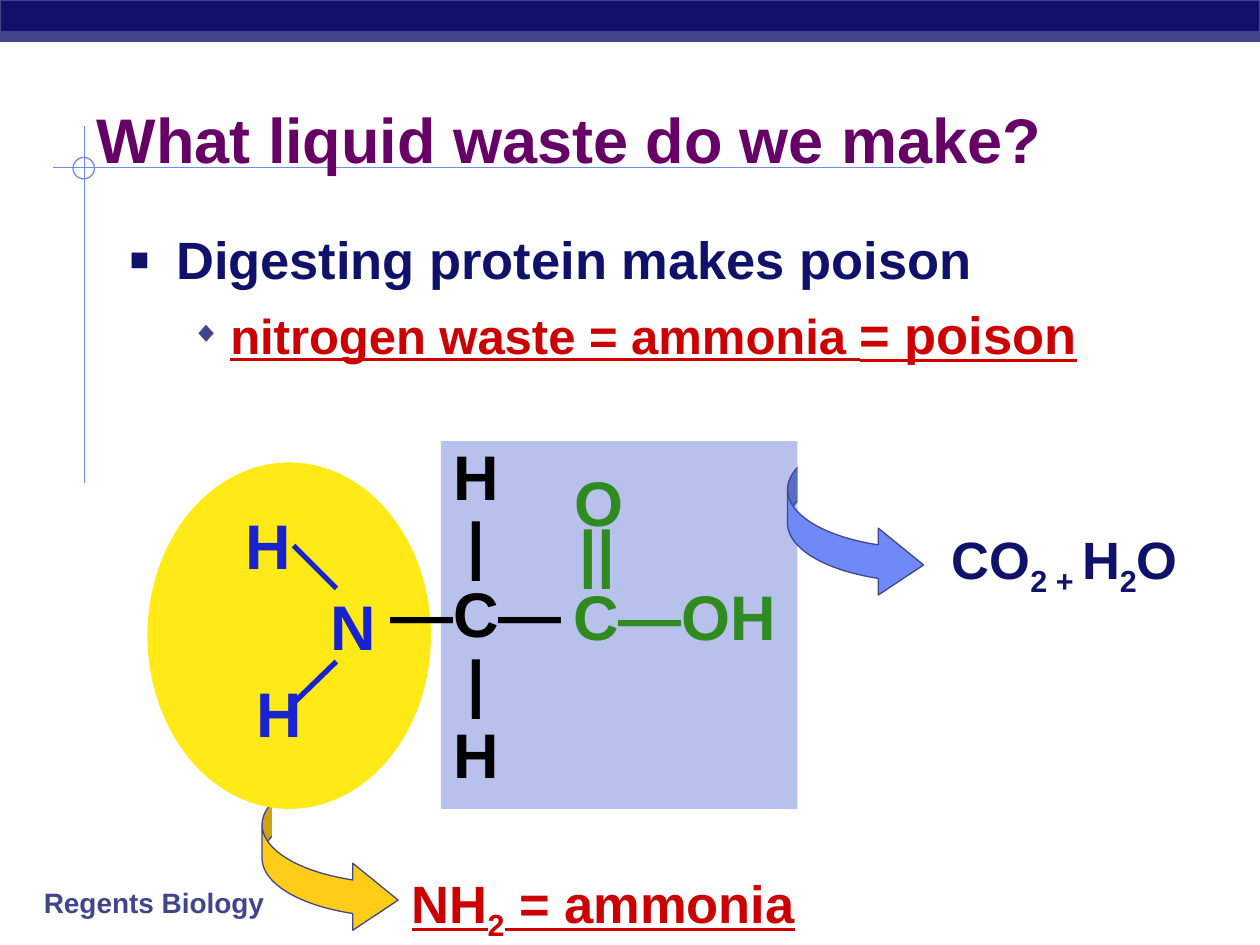
"""Build a slide on the nitrogen waste that digesting protein makes."""
from dataclasses import dataclass
from typing import Any, Optional

import pptx
import pptx.dml.color
import pptx.enum.shapes
import pptx.enum.text
import pptx.oxml
import pptx.oxml.ns
import pptx.util
from pptx.util import Inches

RGB = pptx.dml.color.RGBColor
SHAPE = pptx.enum.shapes.MSO_SHAPE
ALIGN = pptx.enum.text.PP_ALIGN
ANCHOR = pptx.enum.text.MSO_ANCHOR

NAVY = RGB(0x0F, 0x11, 0x6A)
SLATE = RGB(0x40, 0x45, 0x8C)
SKY = RGB(0x6F, 0x89, 0xF7)
PALE_BLUE = RGB(0xB7, 0xC1, 0xEB)
PURPLE = RGB(0x66, 0x00, 0x66)
RED = RGB(0xCC, 0x00, 0x00)
BLUE = RGB(0x18, 0x22, 0xCD)
GREEN = RGB(0x2F, 0x8B, 0x20)
YELLOW = RGB(0xFF, 0xEA, 0x18)
GOLD = RGB(0xFF, 0xCC, 0x18)
BLACK = RGB(0, 0, 0)
WHITE = RGB(0xFF, 0xFF, 0xFF)
FONT = "Arial"
ARROW_BEND = (0.246, 0.492, 0.333)


@dataclass
class Run:
    text: str
    size: Optional[float] = None
    underline: Optional[bool] = None
    subscript: bool = False


@dataclass
class Bullet:
    char: str
    color: RGB
    percent: int
    margin: float
    hang: float


@dataclass
class Line:
    runs: list[Run]
    spacing: Optional[float] = None
    before: float = 0
    level: int = 0
    bullet: Optional[Bullet] = None
    color: Optional[RGB] = None


@dataclass
class Atom:
    symbol: str
    left: float
    top: float
    color: RGB


def add_bullet(paragraph: Any, bullet: Bullet) -> None:
    props = paragraph._p.get_or_add_pPr()
    props.set("marL", str(Inches(bullet.margin)))
    props.set("indent", str(-Inches(bullet.hang)))
    ns = pptx.oxml.ns.nsdecls("a")
    for xml in (
        f'<a:buClr {ns}><a:srgbClr val="{bullet.color}"/></a:buClr>',
        f'<a:buSzPct {ns} val="{bullet.percent * 1000}"/>',
        f'<a:buFont {ns} typeface="{FONT}"/>',
        f'<a:buChar {ns} char="{bullet.char}"/>',
    ):
        props.append(pptx.oxml.parse_xml(xml))


def add_text(shapes: Any, text: str | list[Line], box: tuple, *, size: float = 36,
             color: RGB = BLACK, align: Any = ALIGN.LEFT, anchor: Any = ANCHOR.MIDDLE,
             wrap: bool = False) -> None:
    frame = shapes.add_textbox(*map(Inches, box)).text_frame
    frame.word_wrap = wrap
    frame.vertical_anchor = anchor
    lines = [Line([Run(text)])] if isinstance(text, str) else text
    for index, line in enumerate(lines):
        paragraph = frame.add_paragraph() if index else frame.paragraphs[0]
        paragraph.alignment = align
        paragraph.level = line.level
        paragraph.space_before = pptx.util.Pt(line.before)
        if line.spacing:
            paragraph.line_spacing = line.spacing
        if line.bullet:
            add_bullet(paragraph, line.bullet)
        for part in line.runs:
            run = paragraph.add_run()
            run.text = part.text
            run.font.name = FONT
            run.font.bold = True
            run.font.size = pptx.util.Pt(part.size or size)
            run.font.color.rgb = line.color or color
            run.font.underline = part.underline
            if part.subscript:
                run.font._element.set("baseline", "-25000")


def add_block(shapes: Any, kind: Any, box: tuple, fill: Optional[RGB] = None,
              outline: Optional[RGB] = None, bend: tuple = ()) -> None:
    block = shapes.add_shape(kind, *map(Inches, box))
    block.shadow.inherit = False
    if fill is None:
        block.fill.background()
    else:
        block.fill.solid()
        block.fill.fore_color.rgb = fill
    if outline is None:
        block.line.fill.background()
    else:
        block.line.color.rgb = outline
        block.line.width = pptx.util.Pt(0.75)
    for index, value in enumerate(bend):
        block.adjustments[index] = value


def add_line(shapes: Any, ends: tuple, color: RGB, width: float) -> None:
    line = shapes.add_connector(pptx.enum.shapes.MSO_CONNECTOR.STRAIGHT, *map(Inches, ends))
    line.line.color.rgb = color
    line.line.width = pptx.util.Pt(width)
    line._element.spPr.append(
        pptx.oxml.parse_xml(f'<a:effectLst {pptx.oxml.ns.nsdecls("a")}/>'))


def add_waste_arrow(shapes: Any, left: float, top: float, fill: RGB) -> None:
    add_block(shapes, SHAPE.CURVED_RIGHT_ARROW, (left, top, 1.08, 1.33), fill, SLATE, ARROW_BEND)
    add_block(shapes, SHAPE.RECTANGLE, (left + 0.08, top - 0.5, 1.17, 1.08), WHITE)


def add_atom(shapes: Any, atom: Atom) -> None:
    add_text(shapes, atom.symbol, (atom.left, atom.top, 0.56, 0.7),
             color=atom.color, align=ALIGN.CENTER)


def add_frame(shapes: Any) -> None:
    for ends in ((0.42, 1.33, 7.33, 1.33), (0.67, 1, 0.67, 3.83)):
        add_line(shapes, ends, SKY, 1)
    add_block(shapes, SHAPE.OVAL, (0.58, 1.25, 0.17, 0.17), outline=SKY)
    add_block(shapes, SHAPE.RECTANGLE, (0, 0, 10, 0.33), NAVY, SLATE)
    add_block(shapes, SHAPE.RECTANGLE, (0, 0.25, 10, 0.08), SLATE, SLATE)
    add_text(shapes, "Regents Biology", (0.25, 6.98, 2.33, 0.37), size=16, color=SLATE, wrap=True)


def add_wording(shapes: Any) -> None:
    add_text(shapes, "What liquid waste do we make?", (0.67, 0.75, 8.5, 0.83),
             color=PURPLE, anchor=ANCHOR.TOP, wrap=True)
    points = [
        Line([Run("Digesting protein makes poison")], bullet=Bullet("▪", NAVY, 120, 0.38, 0.38)),
        Line([Run("nitrogen waste = ammonia ", 28, True), Run("= poison", 30, True)],
             before=7, level=1, bullet=Bullet("◆", SLATE, 60, 0.81, 0.31), color=RED),
    ]
    add_text(shapes, points, (0.92, 1.75, 8.5, 2.17), size=30, color=NAVY,
             anchor=ANCHOR.TOP, wrap=True)


def add_amino_acid(shapes: Any) -> None:
    add_block(shapes, SHAPE.OVAL, (1.17, 3.67, 2.25, 2.75), YELLOW)
    amine = shapes.add_group_shape().shapes
    for ends in ((2.67, 4.67, 2.33, 4.33), (2.33, 5.58, 2.67, 5.25)):
        add_line(amine, ends, BLUE, 3)
    for atom in (Atom("H", 1.85, 3.97, BLUE), Atom("H", 1.94, 5.3, BLUE),
                 Atom("N", 2.52, 4.61, BLUE)):
        add_atom(amine, atom)
    acid = shapes.add_group_shape().shapes
    add_text(acid, [Line([Run("C—OH")], spacing=0.5)], (4.22, 4.79, 2.27, 0.4),
             color=GREEN, align=ALIGN.CENTER, wrap=True)
    add_text(acid, "||", (4.5, 4.02, 0.48, 0.7), color=GREEN, align=ALIGN.CENTER)
    add_atom(acid, Atom("O", 4.46, 3.63, GREEN))
    chain = [Line([Run("H")])] + [
        Line([Run(bond)], spacing=spacing, before=20.5)
        for bond, spacing in (("|", 0.3), ("—C—", 0.5), ("|", 0.4))]
    add_text(shapes, chain, (3, 3.4, 1.56, 2.32), align=ALIGN.CENTER)


def main() -> None:
    deck = pptx.Presentation()
    deck.slide_width, deck.slide_height = Inches(10), Inches(7.5)
    shapes = deck.slides.add_slide(deck.slide_layouts[6]).shapes
    add_frame(shapes)
    add_block(shapes, SHAPE.RECTANGLE, (3.5, 3.5, 2.83, 2.92), PALE_BLUE)
    add_wording(shapes)
    add_atom(shapes, Atom("H", 3.5, 5.63, BLACK))
    carbon_waste = [Run("CO"), Run("2 + ", subscript=True), Run("H"),
                    Run("2", subscript=True), Run("O")]
    add_text(shapes, [Line(carbon_waste)], (7.41, 4.17, 2.08, 0.6), size=30, color=NAVY,
             align=ALIGN.CENTER)
    add_waste_arrow(shapes, 6.25, 3.42, SKY)
    ammonia = [Run("NH", underline=True), Run("2", subscript=True),
               Run(" = ammonia", underline=True)]
    add_text(shapes, [Line(ammonia)], (3.17, 6.9, 3.26, 0.6), size=30, color=RED)
    add_waste_arrow(shapes, 2.08, 6.08, GOLD)
    add_amino_acid(shapes)
    deck.save("out.pptx")


if __name__ == "__main__":
    main()
